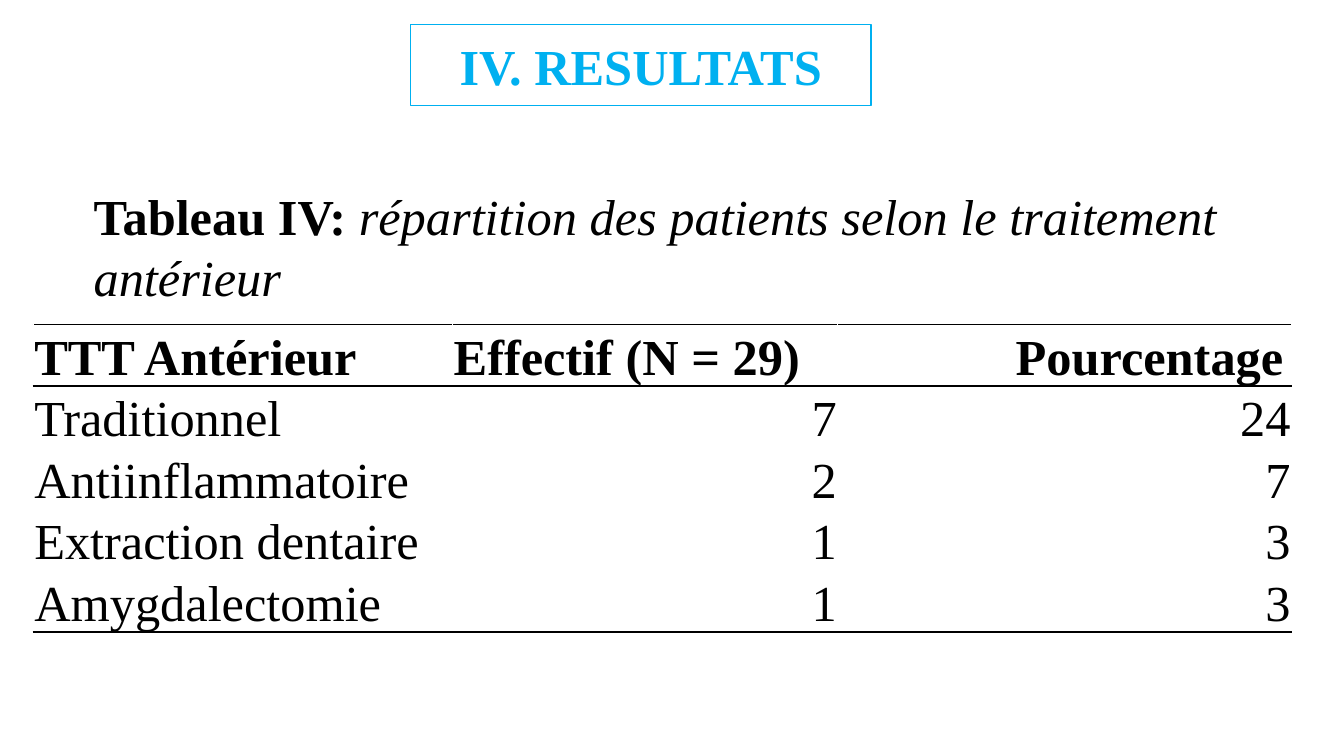
from lxml import etree
from pptx import Presentation
from pptx.dml.color import RGBColor
from pptx.enum.text import MSO_ANCHOR, MSO_AUTO_SIZE, PP_ALIGN
from pptx.oxml.ns import qn
from pptx.util import Inches, Pt

BLUE = RGBColor(0x00, 0xB0, 0xF0)
BLACK = RGBColor(0x00, 0x00, 0x00)
WHITE = RGBColor(0xFF, 0xFF, 0xFF)
LEFT, CENTER, RIGHT = PP_ALIGN.LEFT, PP_ALIGN.CENTER, PP_ALIGN.RIGHT
FONT, SIZE = "Times New Roman", Pt(36)

TITLE = "IV. RESULTATS"
CAPTION = ("Tableau IV: ", "répartition des patients selon le traitement antérieur")
ROWS = [
    ("TTT Antérieur", "Effectif (N = 29)", "Pourcentage"),
    ("Traditionnel", "7", "24"),
    ("Antiinflammatoire", "2", "7"),
    ("Extraction dentaire", "1", "3"),
    ("Amygdalectomie", "1", "3"),
]
COL_WIDTHS = (4.16, 3.82, 4.5)
ROW_HEIGHT = 0.61


def add_run(p, text, color=BLACK, bold=False, italic=False):
    r = p.add_run()
    r.text = text
    r.font.name, r.font.size = FONT, SIZE
    r.font.bold, r.font.italic = bold, italic
    r.font.color.rgb = color


def set_borders(cell, top, bottom):
    """Draw 1 pt cell borders, white at the sides."""
    tc_pr = cell._tc.get_or_add_tcPr()
    sides = (("a:lnL", WHITE), ("a:lnR", WHITE), ("a:lnT", top), ("a:lnB", bottom))
    for i, (tag, color) in enumerate(sides):
        ln = etree.Element(qn(tag), w=str(Pt(1)))
        fill = etree.SubElement(ln, qn("a:solidFill"))
        etree.SubElement(fill, qn("a:srgbClr"), val=str(color))
        tc_pr.insert(i, ln)


prs = Presentation()
prs.slide_width, prs.slide_height = Inches(13.33), Inches(7.5)
s = prs.slides.add_slide(prs.slide_layouts[5])

title = s.shapes.title
title.left, title.top = Inches(4.07), Inches(0.24)
title.width, title.height = Inches(4.57), Inches(0.81)
title.line.color.rgb = BLUE
title.line.width = Pt(1)
tf = title.text_frame
tf.auto_size = MSO_AUTO_SIZE.NONE
tf.vertical_anchor = MSO_ANCHOR.MIDDLE
tf.paragraphs[0].alignment = CENTER
add_run(tf.paragraphs[0], TITLE, BLUE, bold=True)

table = s.shapes.add_table(
    len(ROWS), len(COL_WIDTHS), Inches(0.33), Inches(3.22),
    Inches(sum(COL_WIDTHS)), Inches(ROW_HEIGHT * len(ROWS))).table
for column, width in zip(table.columns, COL_WIDTHS):
    column.width = Inches(width)
for i, row in enumerate(ROWS):
    table.rows[i].height = Inches(ROW_HEIGHT)
    header, last = i == 0, i == len(ROWS) - 1
    for j, text in enumerate(row):
        cell = table.cell(i, j)
        cell.fill.background()
        cell.vertical_anchor = MSO_ANCHOR.BOTTOM
        cell.margin_left = cell.margin_top = cell.margin_right = Inches(0.01)
        cell.margin_bottom = 0
        if header and j == 2:
            cell.margin_right = Inches(0.08)
        p = cell.text_frame.paragraphs[0]
        p.alignment = LEFT if j == 0 or (header and j == 1) else RIGHT
        add_run(p, text, bold=header)
        set_borders(cell, BLACK if i <= 1 else WHITE, BLACK if header or last else WHITE)

caption = s.shapes.add_textbox(Inches(0.83), Inches(1.79), Inches(12.2), Inches(1.31))
tf = caption.text_frame
tf.word_wrap = True
tf.auto_size = MSO_AUTO_SIZE.SHAPE_TO_FIT_TEXT
p = tf.paragraphs[0]
add_run(p, CAPTION[0], bold=True)
add_run(p, CAPTION[1], italic=True)

prs.save("out.pptx")
